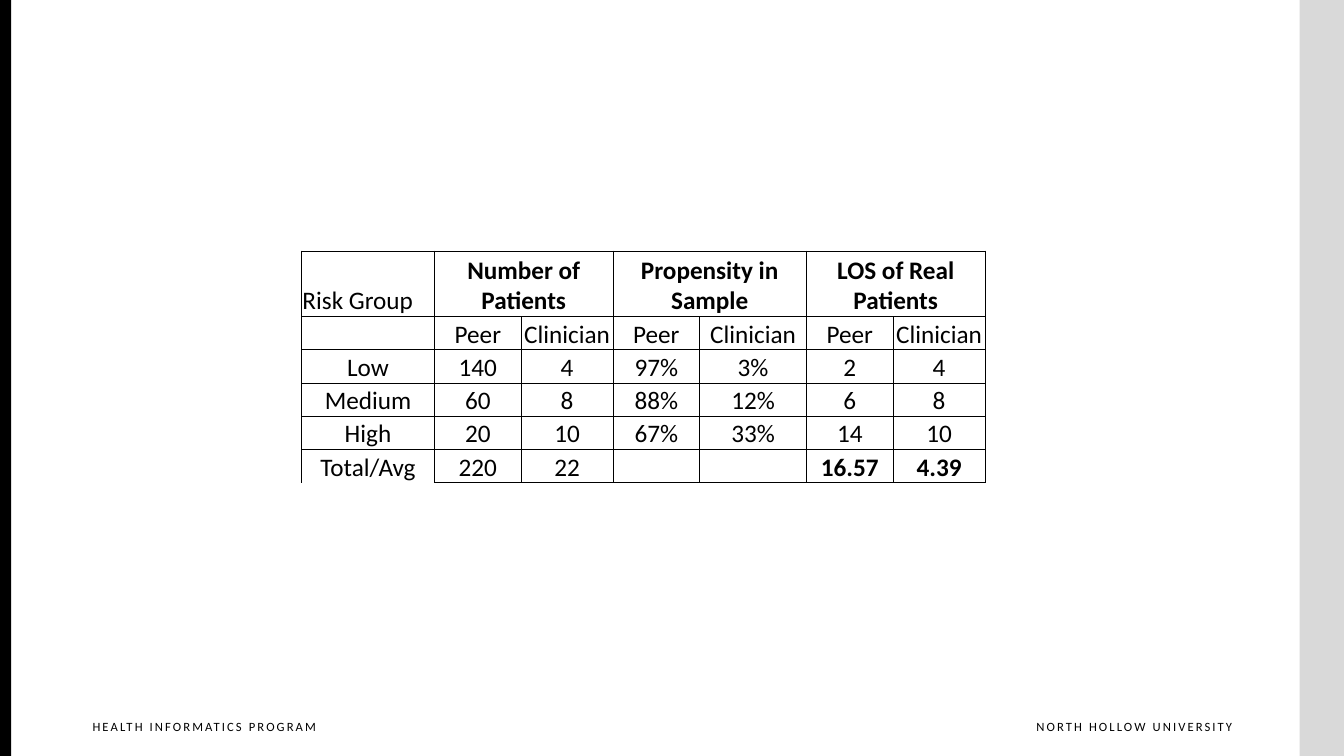
from lxml.etree import SubElement as Sub
from pptx import Presentation
from pptx.dml.color import RGBColor as Rgb
from pptx.enum.shapes import MSO_SHAPE as Kind
from pptx.enum.text import MSO_ANCHOR as Anchor, PP_ALIGN as Align
from pptx.oxml.ns import qn
from pptx.util import Inches, Pt

WIDE, HIGH = 13.33, 7.5
COLS = [1.32, 0.86, 0.91, 0.86, 1.06, 0.86, 0.91]
ROWS = [0.65] + [0.33] * 5
HEADS = ["Number of Patients", "Propensity in Sample", "LOS of Real Patients"]
DATA = [
    ["Risk Group"] + [text for head in HEADS for text in (head, "")],
    [""] + ["Peer", "Clinician"] * 3,
    ["Low", "140", "4", "97%", "3%", "2", "4"],
    ["Medium", "60", "8", "88%", "12%", "6", "8"],
    ["High", "20", "10", "67%", "33%", "14", "10"],
    ["Total/Avg", "220", "22", "", "", "16.57", "4.39"],
]


def hue(code):
    return Rgb.from_string(code)


def put(item, values):
    for name, value in values.items():
        setattr(item, name, value)


class Page:
    """Holds the style and the current slide, and draws each kind of element."""

    font = "Calibri"
    ink = "000000"
    inset = {"margin_left": Inches(0.1), "margin_top": Inches(0.05),
             "margin_right": 0, "margin_bottom": Inches(0.05)}
    pad = {"margin_left": Inches(0.01), "margin_top": Inches(0.01),
           "margin_right": Inches(0.01), "margin_bottom": 0,
           "vertical_anchor": Anchor.BOTTOM}
    plain = {"first_row": False, "horz_banding": False}

    def __init__(self, deck):
        self.slide = deck.slides.add_slide(deck.slide_layouts[6])

    def words(self, para, text, size, align, bold=False):
        para.alignment = align
        if not text:
            return None
        run = para.add_run()
        run.text = text
        put(run.font, {"name": self.font, "size": Pt(size), "bold": bold})
        run.font.color.rgb = hue(self.ink)
        return run

    def bar(self, left, width, color):
        box = self.slide.shapes.add_shape(
            Kind.RECTANGLE, Inches(left), 0, Inches(width), Inches(HIGH))
        box.shadow.inherit = False
        box.fill.solid()
        box.fill.fore_color.rgb = hue(color)
        box.line.fill.background()

    def label(self, left, width, text, align):
        box = self.slide.shapes.add_textbox(
            Inches(left), Inches(7.08), Inches(width), Inches(0.33))
        frame = box.text_frame
        put(frame, {"word_wrap": True, **self.inset})
        run = self.words(frame.paragraphs[0], text, 9, align)
        run.font._element.set("spc", "150")

    def edge(self, cell, sides):
        props = cell._tc.get_or_add_tcPr()
        for side in "LRTB":
            line = Sub(props, qn("a:ln" + side), w=str(Pt(0.5)))
            if side in sides:
                fill = Sub(line, qn("a:solidFill"))
                Sub(fill, qn("a:srgbClr"), val=self.ink)
            else:
                Sub(line, qn("a:noFill"))

    def table(self, left, top):
        grid = self.slide.shapes.add_table(
            len(ROWS), len(COLS), Inches(left), Inches(top),
            Inches(sum(COLS)), Inches(sum(ROWS))).table
        put(grid, self.plain)
        for col, width in zip(grid.columns, COLS):
            col.width = Inches(width)
        for row, height in zip(grid.rows, ROWS):
            row.height = Inches(height)
        last = len(ROWS) - 1
        for r, texts in enumerate(DATA):
            for c, text in enumerate(texts):
                cell = grid.cell(r, c)
                put(cell, self.pad)
                self.edge(cell, "LRT" if (r, c) == (last, 0) else "LRTB")
                cell.fill.background()
                align = Align.LEFT if r == c == 0 else Align.CENTER
                bold = (r == 0 and c > 0) or (r == last and c > 4)
                self.words(cell.text_frame.paragraphs[0], text, 18, align, bold)
        for c in range(1, len(COLS), 2):
            grid.cell(0, c).merge(grid.cell(0, c + 1))


def main():
    deck = Presentation()
    put(deck, {"slide_width": Inches(WIDE), "slide_height": Inches(HIGH)})
    page = Page(deck)
    page.bar(12.89, 0.44, "D9D9D9")
    page.bar(0, 0.11, "000000")
    page.label(9.87, 2.35, "NORTH HOLLOW UNIVERSITY", Align.RIGHT)
    page.label(0.82, 2.54, "HEALTH INFORMATICS PROGRAM", Align.LEFT)
    page.table(2.99, 2.49)
    deck.save("out.pptx")


if __name__ == "__main__":
    main()
